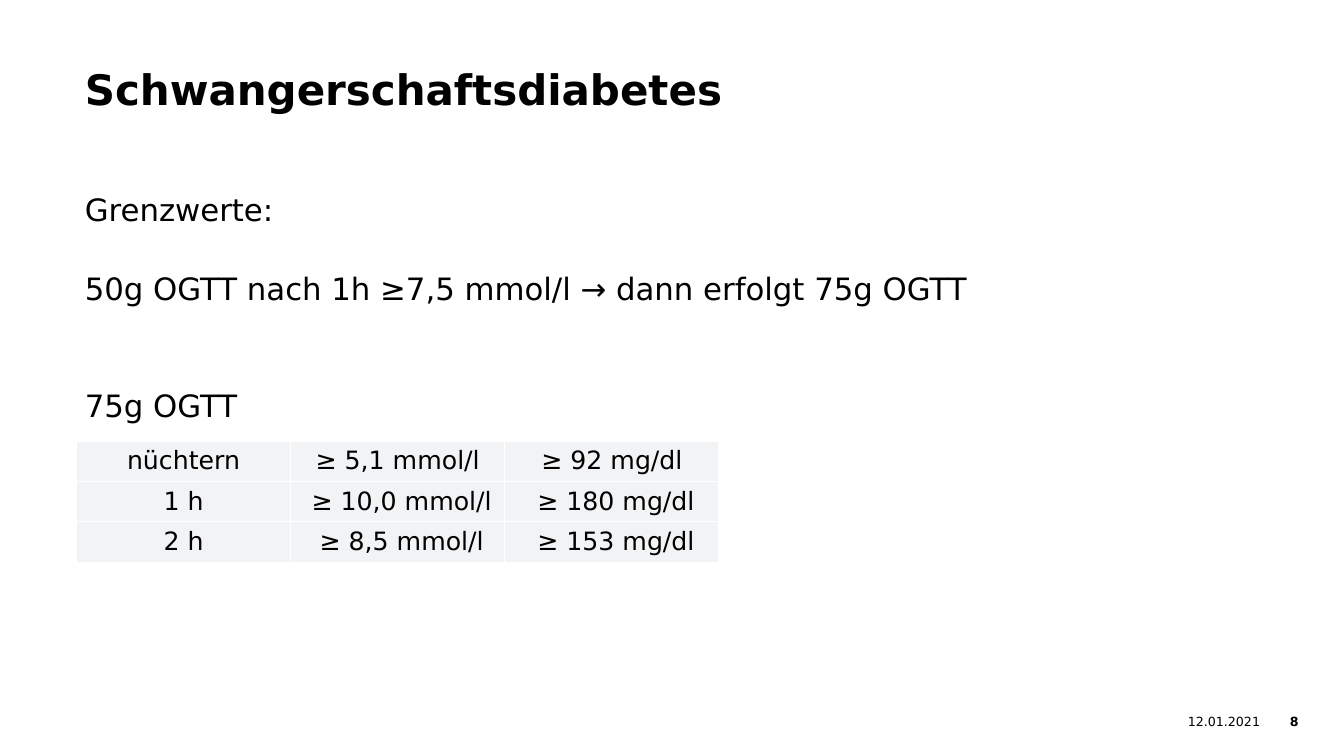
from dataclasses import dataclass

from pptx import Presentation
from pptx.dml.color import RGBColor
from pptx.enum.text import MSO_ANCHOR, PP_ALIGN
from pptx.util import Inches, Pt

LEFT, CENTER, RIGHT = PP_ALIGN.LEFT, PP_ALIGN.CENTER, PP_ALIGN.RIGHT
TOP, MIDDLE = MSO_ANCHOR.TOP, MSO_ANCHOR.MIDDLE


@dataclass(frozen=True)
class Theme:
    font: str = "DejaVu Sans"
    ink: RGBColor = RGBColor(0x00, 0x00, 0x00)
    cell: RGBColor = RGBColor(0xF2, 0xF3, 0xF5)
    title: int = 30
    body: int = 22
    table: int = 18
    footer: int = 9


class SlideBuilder:
    """Places styled elements on a grid of 16 columns and 9 rows."""

    def __init__(self, deck, theme):
        self.theme = theme
        self.column = deck.slide_width / 16
        self.row = deck.slide_height / 9
        self.slide = deck.slides.add_slide(deck.slide_layouts[6])

    def place(self, left, top, width, height):
        return (round(left * self.column), round(top * self.row),
                round(width * self.column), round(height * self.row))

    def style(self, paragraph, size, bold=False, align=LEFT):
        paragraph.alignment = align
        font = paragraph.font
        font.name, font.size, font.bold = self.theme.font, Pt(size), bold
        font.color.rgb = self.theme.ink

    def text(self, area, lines, size, bold=False, align=LEFT, anchor=TOP,
             spacing=1.0, bottom=0):
        """Writes lines, each given as (wording, points of space before)."""
        frame = self.slide.shapes.add_textbox(*self.place(*area)).text_frame
        frame.word_wrap = True
        frame.vertical_anchor = anchor
        frame.margin_left = frame.margin_top = frame.margin_right = 0
        frame.margin_bottom = Inches(bottom)
        for index, (wording, gap) in enumerate(lines):
            paragraph = frame.add_paragraph() if index else frame.paragraphs[0]
            paragraph.text = wording
            paragraph.line_spacing = spacing
            paragraph.space_before = Pt(gap)
            self.style(paragraph, size, bold, align)

    def footer(self, left, width, wording, bold=False):
        self.text((left, 8.38, width, 0.47), [(wording, 0)], self.theme.footer,
                  bold, RIGHT, MIDDLE, bottom=0.04)

    def table(self, left, top, column_width, row_height, rows):
        count = len(rows[0])
        area = self.place(left, top, column_width * count, row_height * len(rows))
        grid = self.slide.shapes.add_table(len(rows), count, *area).table
        grid.first_row = grid.horz_banding = False
        for r, values in enumerate(rows):
            for c, value in enumerate(values):
                cell = grid.cell(r, c)
                cell.fill.solid()
                cell.fill.fore_color.rgb = self.theme.cell
                cell.vertical_anchor = MIDDLE
                cell.text = value
                self.style(cell.text_frame.paragraphs[0], self.theme.table,
                           align=CENTER)


def main():
    deck = Presentation()
    deck.slide_width, deck.slide_height = Inches(13.33), Inches(7.5)
    theme = Theme()
    page = SlideBuilder(deck, theme)

    # Title
    page.text((1.01, 0.82, 12.1, 0.76), [("Schwangerschaftsdiabetes", 0)],
              theme.title, bold=True, spacing=0.9)

    # Date and page number
    page.footer(13.86, 1.14, "12.01.2021")
    page.footer(14.99, 0.47, "8", bold=True)

    # Screening steps
    screening = [
        ("Grenzwerte:", 0),
        ("50g OGTT nach 1h ≥7,5 mmol/l → dann erfolgt 75g OGTT", 27.5),
        ("75g OGTT", 54),
    ]
    page.text((1.01, 2.23, 12.1, 5.68), screening, theme.body, spacing=1.1)

    # Limits of the 75g test
    limits = [
        ("nüchtern", "≥ 5,1 mmol/l", "≥ 92 mg/dl"),
        ("1 h", " ≥ 10,0 mmol/l", " ≥ 180 mg/dl"),
        ("2 h", " ≥ 8,5 mmol/l", " ≥ 153 mg/dl"),
    ]
    page.table(0.91, 5.25, 2.55, 0.47, limits)

    deck.save("out.pptx")


if __name__ == "__main__":
    main()
